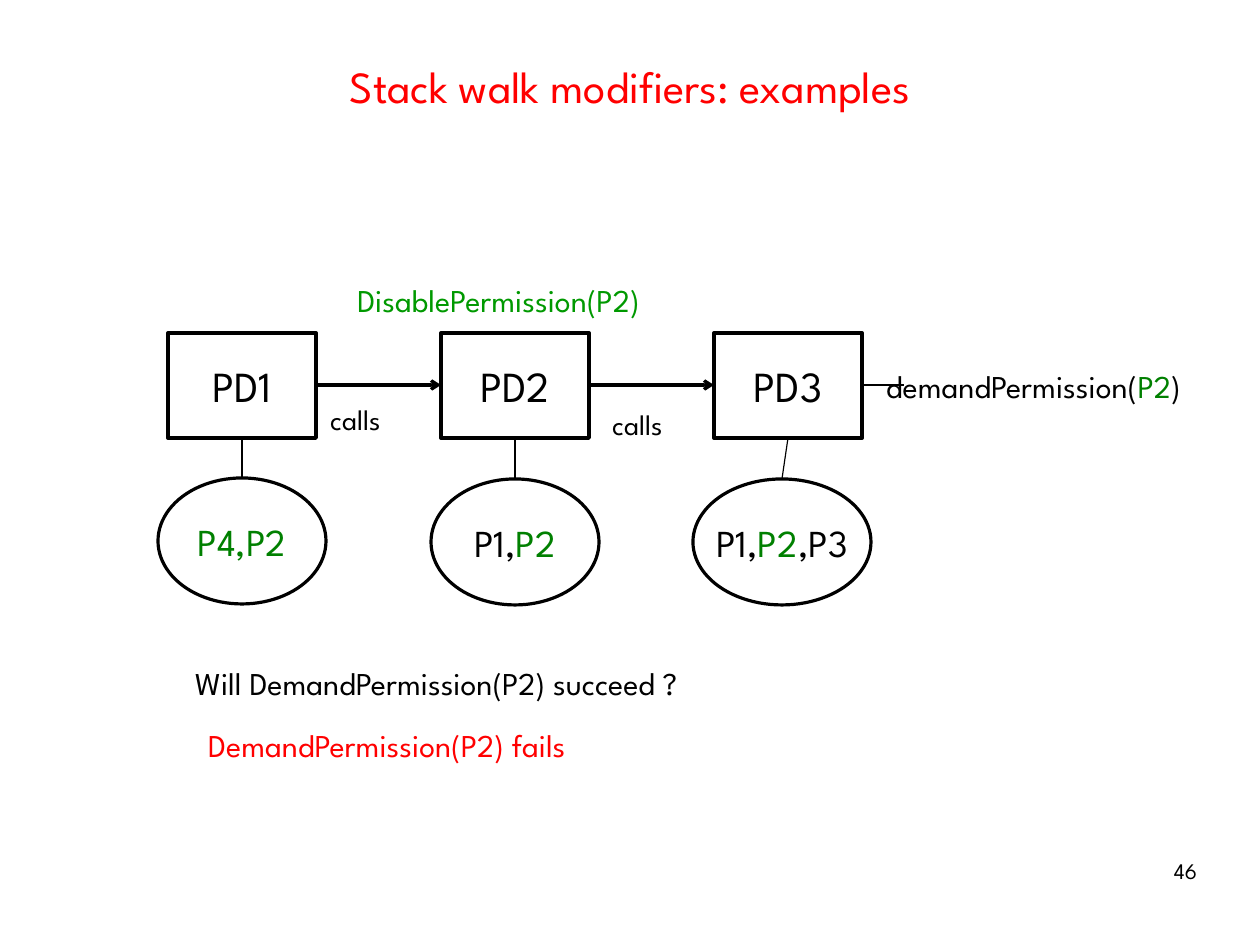
from pptx import Presentation
from pptx.dml.color import RGBColor
from pptx.enum.shapes import MSO_CONNECTOR as Connector, MSO_SHAPE as Shape
from pptx.enum.text import MSO_ANCHOR as Anchor, PP_ALIGN as Align
from pptx.oxml.ns import qn
from pptx.util import Pt
from lxml.etree import SubElement

PX = 8000  # EMU in one px
SLIDE_SIZE = (1260, 945)
FONT = "League Spartan"
BLACK, RED, GREEN, BRIGHT_GREEN = "000000", "FF0000", "008000", "009900"

TITLE = "Stack walk modifiers: examples"
TITLE_BOX = (99, 39, 1062, 93)

# domain name, permission runs, ellipse (left, top, width, height)
DOMAINS = [
    ("PD1", [("P4,P2", GREEN)], (158, 478, 168, 126)),
    ("PD2", [("P1,", BLACK), ("P2", GREEN)], (431, 479, 168, 126)),
    ("PD3", [("P1,", BLACK), ("P2", GREEN), (",P3", BLACK)], (693, 479, 178, 126)),
]
DOMAIN_LEFT, DOMAIN_TOP, DOMAIN_STEP = 168, 333, 273
DOMAIN_WIDTH, DOMAIN_HEIGHT = 148, 105
DEMAND_LINE_LENGTH = 42

# runs, box, size, line spacing
LABELS = [
    ([("demandPermission(", BLACK), ("P2", GREEN), (")", BLACK)], (875, 361, 383, 50), 20, 1),
    ([("DisablePermission(P2)", BRIGHT_GREEN)], (346, 275, 374, 50), 20, 1),
    ([("Will DemandPermission(P2) succeed ?", BLACK)], (184, 658, 620, 50), 20, 1),
    ([("DemandPermission(P2) fails", RED)], (197, 720, 461, 50), 20, 1),
    ([("calls", BLACK)], (319, 391, 106, 51), 18, 1.16),
    ([("calls", BLACK)], (601, 396, 106, 59), 18, 1.16),
]
PAGE_NUMBER = "46"
PAGE_NUMBER_BOX = (903, 860, 294, 65)


def px(*lengths):
    return [length * PX for length in lengths]


def color(value):
    return RGBColor.from_string(value)


def write(shape, runs, size, align=Align.LEFT, anchor=Anchor.TOP, spacing=1, wrap=True):
    frame = shape.text_frame
    frame.word_wrap = wrap
    frame.vertical_anchor = anchor
    paragraph = frame.paragraphs[0]
    paragraph.alignment = align
    paragraph.line_spacing = spacing
    for text, text_color in runs:
        run = paragraph.add_run()
        run.text = text
        run.font.name = FONT
        run.font.size = Pt(size)
        run.font.color.rgb = color(text_color)


def add_outlined(slide, kind, box, runs, size, line_width):
    shape = slide.shapes.add_shape(kind, *px(*box))
    shape.shadow.inherit = False
    shape.fill.background()
    shape.line.color.rgb = color(BLACK)
    shape.line.width = Pt(line_width)
    write(shape, runs, size, Align.CENTER, Anchor.MIDDLE, wrap=False)


def add_line(slide, start, end, width, arrow=False):
    connector = slide.shapes.add_connector(Connector.STRAIGHT, *px(*start, *end))
    connector.line.color.rgb = color(BLACK)
    connector.line.width = Pt(width)
    properties = connector._element.spPr
    if arrow:
        SubElement(properties.find(qn("a:ln")), qn("a:tailEnd"), type="arrow")
    SubElement(properties, qn("a:effectLst"))


def add_page_number(slide):
    page_number = slide.shapes.add_textbox(*px(*PAGE_NUMBER_BOX))
    write(page_number, [(PAGE_NUMBER, BLACK)], 14, Align.RIGHT, spacing=0.93)
    frame = page_number.text_frame
    frame.margin_left = frame.margin_right = frame.margin_top = frame.margin_bottom = 0


def main():
    presentation = Presentation()
    presentation.slide_width, presentation.slide_height = px(*SLIDE_SIZE)
    slide = presentation.slides.add_slide(presentation.slide_layouts[5])

    title = slide.shapes.title
    title.left, title.top, title.width, title.height = px(*TITLE_BOX)
    write(title, [(TITLE, RED)], 28, Align.CENTER, Anchor.MIDDLE)

    middle = DOMAIN_TOP + DOMAIN_HEIGHT // 2
    bottom = DOMAIN_TOP + DOMAIN_HEIGHT
    for index, (name, permissions, ellipse) in enumerate(DOMAINS):
        left = DOMAIN_LEFT + index * DOMAIN_STEP
        right = left + DOMAIN_WIDTH
        add_outlined(slide, Shape.RECTANGLE, (left, DOMAIN_TOP, DOMAIN_WIDTH, DOMAIN_HEIGHT),
                     [(name, BLACK)], 27, 2.5)
        add_outlined(slide, Shape.OVAL, ellipse, permissions, 24, 2)
        ellipse_top = (ellipse[0] + ellipse[2] // 2, ellipse[1])
        add_line(slide, ellipse_top, (left + DOMAIN_WIDTH // 2, bottom), 0.75)
        if index < len(DOMAINS) - 1:
            add_line(slide, (right, middle), (left + DOMAIN_STEP, middle), 2, arrow=True)
        else:
            add_line(slide, (right, middle), (right + DEMAND_LINE_LENGTH, middle), 0.75)

    for runs, box, size, spacing in LABELS:
        write(slide.shapes.add_textbox(*px(*box)), runs, size, spacing=spacing)
    add_page_number(slide)

    presentation.save("out.pptx")


if __name__ == "__main__":
    main()
